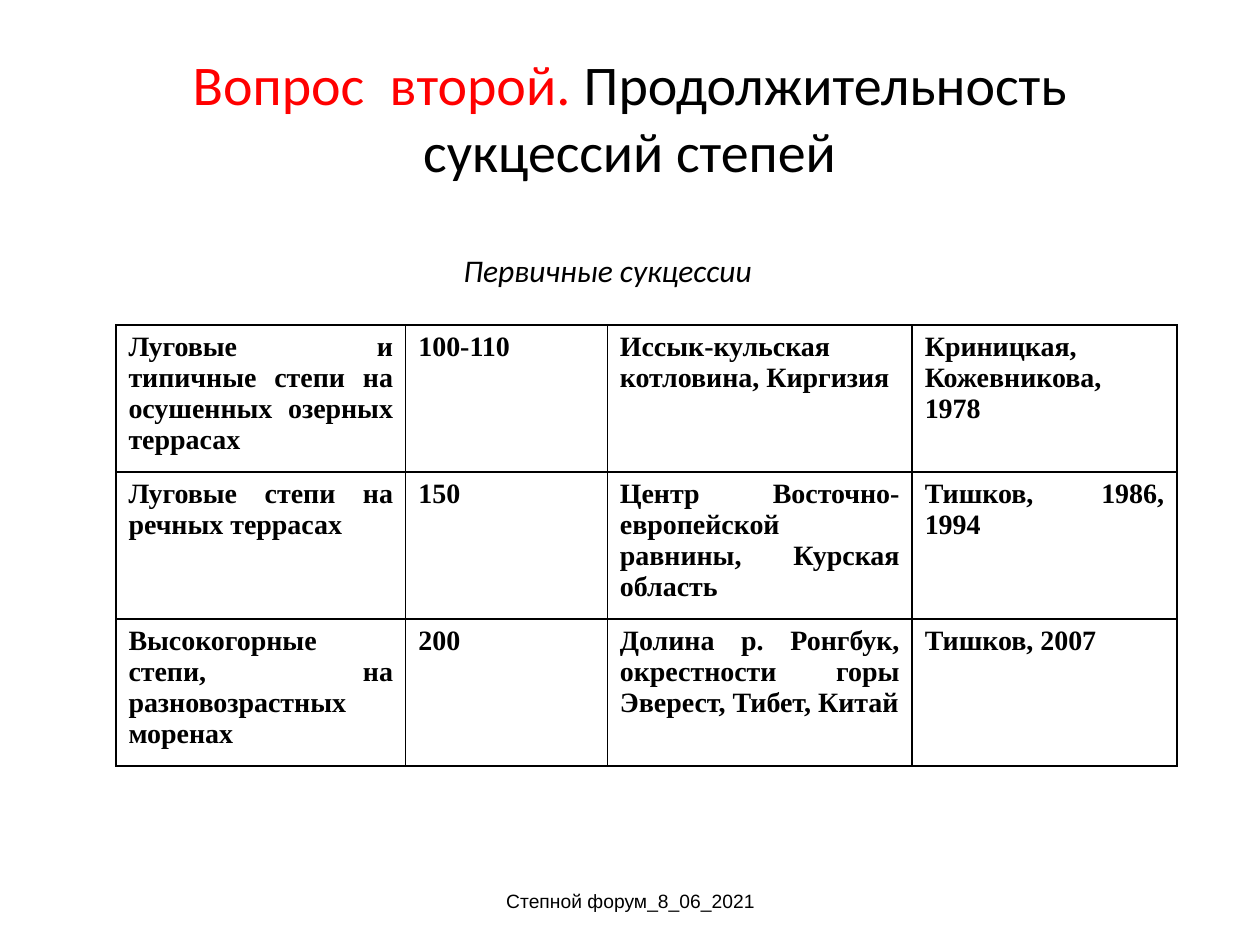
from dataclasses import dataclass

from lxml.etree import SubElement
from pptx import Presentation
from pptx.dml.color import RGBColor
from pptx.enum.text import MSO_ANCHOR as Anchor, PP_ALIGN as Align
from pptx.oxml.ns import qn
from pptx.util import Inches, Pt


@dataclass(frozen=True)
class Theme:
    ink: str = "000000"
    accent: str = "FF0000"
    heading_font: str = "Calibri"
    table_font: str = "Times New Roman"
    footer_font: str = "Arial"
    title_size: int = 32
    subtitle_size: int = 18
    table_size: int = 16
    footer_size: int = 11
    border_width: int = 1


TITLE_RUNS = [("Вопрос  второй.", "accent"), (" Продолжительность сукцессий степей", "ink")]
COLUMN_WIDTHS = [2.3, 1.6, 2.42, 2.1]
ROW_HEIGHT = 1.07
SUCCESSIONS = [
    ["Луговые и типичные степи на осушенных озерных террасах", "100-110",
     "Иссык-кульская котловина, Киргизия", "Криницкая, Кожевникова, 1978"],
    ["Луговые степи на речных террасах", "150",
     "Центр Восточно-европейской равнины, Курская область", "Тишков, 1986, 1994"],
    ["Высокогорные степи, на разновозрастных моренах", "200",
     "Долина р. Ронгбук, окрестности горы Эверест, Тибет, Китай", "Тишков, 2007"],
]


class SlideBuilder:
    def __init__(self, slide, theme):
        self.slide = slide
        self.theme = theme

    def set_attributes(self, target, values):
        for name, value in values.items():
            setattr(target, name, value)

    def place(self, shape, box):
        names = ("left", "top", "width", "height")
        self.set_attributes(shape, dict(zip(names, map(Inches, box))))

    def add_run(self, paragraph, text, color, **font_values):
        run = paragraph.add_run()
        run.text = text
        self.set_attributes(run.font, font_values)
        run.font.color.rgb = RGBColor.from_string(color)

    def title(self, box, runs):
        shape = self.slide.shapes.title
        self.place(shape, box)
        self.set_attributes(shape.text_frame, {"word_wrap": True, "vertical_anchor": Anchor.MIDDLE})
        paragraph = shape.text_frame.paragraphs[0]
        paragraph.alignment = Align.CENTER
        for text, color_name in runs:
            self.add_run(paragraph, text, getattr(self.theme, color_name),
                         name=self.theme.heading_font, size=Pt(self.theme.title_size))

    def text(self, box, text, frame_values, alignment, **font_values):
        shape = self.slide.shapes.add_textbox(*map(Inches, box))
        self.set_attributes(shape.text_frame, frame_values)
        paragraph = shape.text_frame.paragraphs[0]
        paragraph.alignment = alignment
        self.add_run(paragraph, text, self.theme.ink, **font_values)

    def border(self, cell):
        properties = cell._tc.get_or_add_tcPr()
        for side in ("a:lnL", "a:lnR", "a:lnT", "a:lnB"):
            line = SubElement(properties, qn(side), w=str(Pt(self.theme.border_width)))
            fill = SubElement(line, qn("a:solidFill"))
            SubElement(fill, qn("a:srgbClr"), val=self.theme.ink)

    def table(self, left, top, widths, row_height, rows):
        size = (sum(widths), row_height * len(rows))
        table = self.slide.shapes.add_table(
            len(rows), len(widths), *map(Inches, (left, top, *size))).table
        self.set_attributes(table, {"first_row": False, "horz_banding": False})
        for column, width in zip(table.columns, widths):
            column.width = Inches(width)
        for row, texts in zip(table.rows, rows):
            row.height = Inches(row_height)
            for cell, text in zip(row.cells, texts):
                self.border(cell)
                cell.fill.background()
                paragraph = cell.text_frame.paragraphs[0]
                paragraph.alignment = Align.JUSTIFY
                self.add_run(paragraph, text, self.theme.ink, name=self.theme.table_font,
                             size=Pt(self.theme.table_size), bold=True)


def main():
    presentation = Presentation()
    presentation.slide_width = Inches(10)
    presentation.slide_height = Inches(7.5)
    slide = presentation.slides.add_slide(presentation.slide_layouts[5])
    theme = Theme()
    builder = SlideBuilder(slide, theme)
    builder.text((3.42, 6.95, 3.17, 0.4), "Степной форум_8_06_2021",
                 {"word_wrap": True, "vertical_anchor": Anchor.MIDDLE}, Align.CENTER,
                 name=theme.footer_font, size=Pt(theme.footer_size))
    builder.title((0.5, 0.3, 9, 1.25), TITLE_RUNS)
    builder.table(0.92, 2.58, COLUMN_WIDTHS, ROW_HEIGHT, SUCCESSIONS)
    builder.text((3.58, 1.94, 2.78, 0.4), "Первичные сукцессии",
                 {"word_wrap": False}, Align.LEFT,
                 name=theme.heading_font, size=Pt(theme.subtitle_size), italic=True)
    presentation.save("out.pptx")


if __name__ == "__main__":
    main()
